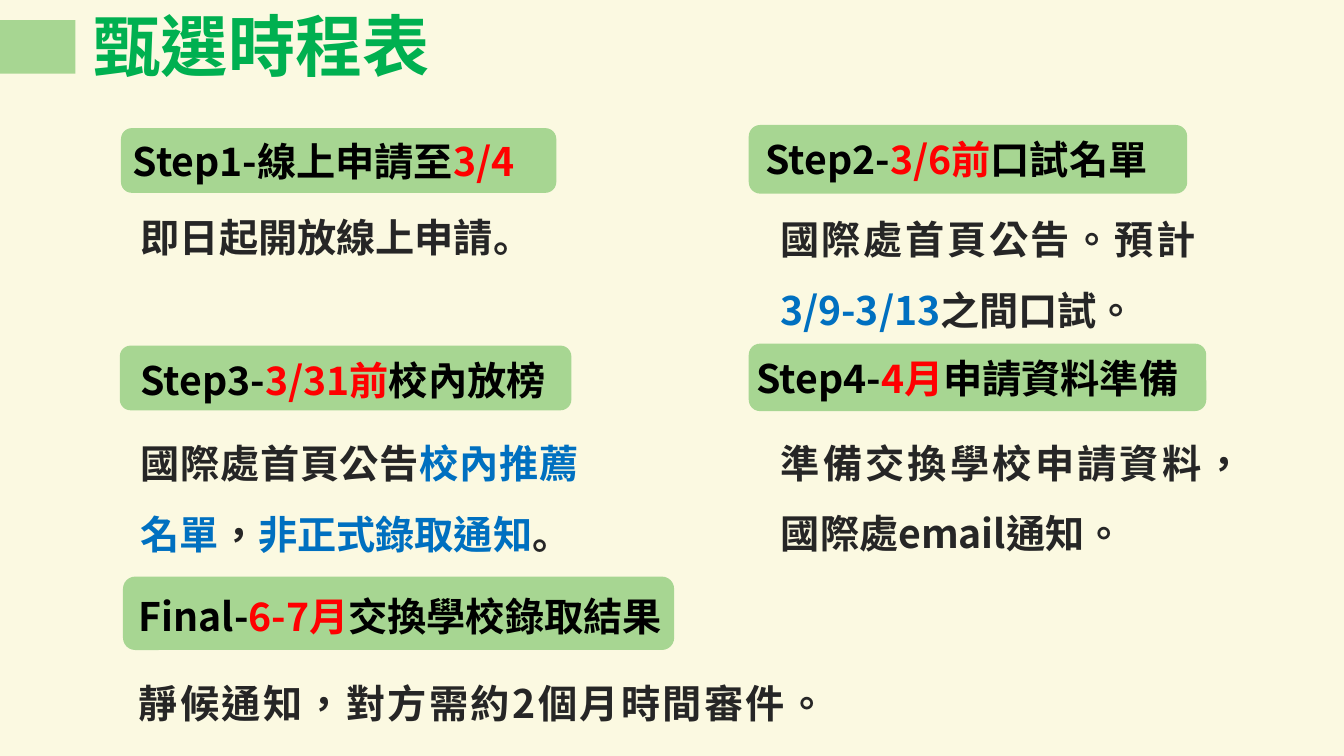
from pptx import Presentation
from pptx.dml.color import RGBColor
from pptx.enum import lang, shapes, text
from pptx.oxml.ns import qn
from pptx.util import Cm, Pt

FONT = "Noto Sans CJK SC"
COLORS = {"page": "FBF9E1", "badge": "A7D692", "title": "00B050", "step": "000000",
          "date": "FF0000", "detail": "262626", "key": "0070C0"}
TW = lang.MSO_LANGUAGE_ID.TRADITIONAL_CHINESE
CN = lang.MSO_LANGUAGE_ID.SIMPLIFIED_CHINESE

TITLE = [("甄選時程表", "title")]
TITLE_BOX = (2.11, -0.03, 9.07, 2.31)
TITLE_MARK = (0, 0.51, 1.9, 1.35)

# Boxes are left, top, width, height in cm; runs are text, colour and, if needed, language.
STEPS = [
    {"badge": (3.05, 3.23, 10.97, 1.63),
     "heading": (3.1, 3.33, 12.95, 1.45),
     "heading_runs": [("Step1-線上申請至", "step"), ("3/4", "date")],
     "detail": (3.3, 4.67, 12.14, 1.83),
     "detail_runs": [("即日起開放線上申請。", "detail", CN)]},
    {"badge": (18.87, 3.15, 11.05, 1.73),
     "heading": (19.05, 3.28, 10.97, 1.45),
     "heading_runs": [("Step2-", "step"), ("3/6前", "date"), ("口試名單", "step")],
     "detail": (19.41, 4.72, 10.97, 3.84),
     "detail_runs": [("國際處首頁公告。預計", "detail"), ("3/9-3/13", "key"),
                     ("之間口試。", "detail")]},
    {"badge": (3.02, 8.71, 11.38, 1.63),
     "heading": (3.3, 8.86, 12.07, 1.45),
     "heading_runs": [("Step3-", "step"), ("3/31前", "date"), ("校內放榜", "step")],
     "detail": (3.3, 10.36, 11.53, 3.84),
     "detail_runs": [("國際處首頁公告", "detail"), ("校內推薦名單", "key"), ("，", "detail"),
                     ("非正式錄取通知", "key"), ("。", "detail", CN)]},
    {"badge": (18.87, 8.66, 11.53, 1.7),
     "heading": (18.82, 8.81, 11.76, 1.45),
     "heading_runs": [("Step4-", "step"), ("4月", "date"), ("申請資料準備", "step")],
     "detail": (19.43, 10.34, 11.18, 3.84),
     "detail_runs": [("準備交換學校申請資料，國際處email通知。", "detail")]},
    {"badge": (3.1, 14.53, 13.89, 1.85),
     "heading": (3.25, 14.81, 15.44, 1.45),
     "heading_runs": [("Final-", "step"), ("6-7月", "date"), ("交換學校錄取結果", "step")],
     "detail": (3.25, 16.41, 16.84, 2.06),
     "detail_runs": [("靜候通知，對方需約2個月時間審件。", "detail")]},
]


def rgb(name):
    return RGBColor.from_string(COLORS[name])


def lengths(box):
    return [Cm(value) for value in box]


def add_block(slide, kind, box):
    """Add a plain green shape without outline or shadow."""
    block = slide.shapes.add_shape(kind, *lengths(box))
    block.shadow.inherit = False
    block.fill.solid()
    block.fill.fore_color.rgb = rgb("badge")
    block.line.fill.background()


def write(frame, runs, size=28, align=text.PP_ALIGN.LEFT, spacing=1.0, wrap=True):
    """Fill a text frame with one paragraph of bold coloured runs."""
    frame.word_wrap = wrap
    frame.auto_size = text.MSO_AUTO_SIZE.SHAPE_TO_FIT_TEXT
    frame.vertical_anchor = text.MSO_ANCHOR.TOP
    paragraph = frame.paragraphs[0]
    paragraph.alignment = align
    paragraph.line_spacing = spacing
    for words, color, *language in runs:
        run = paragraph.add_run()
        run.text = words
        font = run.font
        font.name, font.size, font.bold = FONT, Pt(size), True
        font.color.rgb = rgb(color)
        font.language_id = language[0] if language else TW
        latin = run._r.rPr.find(qn("a:latin"))
        east_asian = latin.makeelement(qn("a:ea"), {"typeface": FONT})
        latin.addnext(east_asian)


def main():
    prs = Presentation()
    prs.slide_width, prs.slide_height = Cm(33.87), Cm(19.05)
    slide = prs.slides.add_slide(prs.slide_layouts[5])
    slide.background.fill.solid()
    slide.background.fill.fore_color.rgb = rgb("page")

    title = slide.shapes.title
    title.left, title.top, title.width, title.height = lengths(TITLE_BOX)
    write(title.text_frame, TITLE, size=48, wrap=False)
    add_block(slide, shapes.MSO_SHAPE.RECTANGLE, TITLE_MARK)

    for step in STEPS:
        add_block(slide, shapes.MSO_SHAPE.ROUNDED_RECTANGLE, step["badge"])
        heading = slide.shapes.add_textbox(*lengths(step["heading"]))
        write(heading.text_frame, step["heading_runs"])
        detail = slide.shapes.add_textbox(*lengths(step["detail"]))
        write(detail.text_frame, step["detail_runs"],
              align=text.PP_ALIGN.JUSTIFY, spacing=1.5)

    prs.save("out.pptx")


if __name__ == "__main__":
    main()
